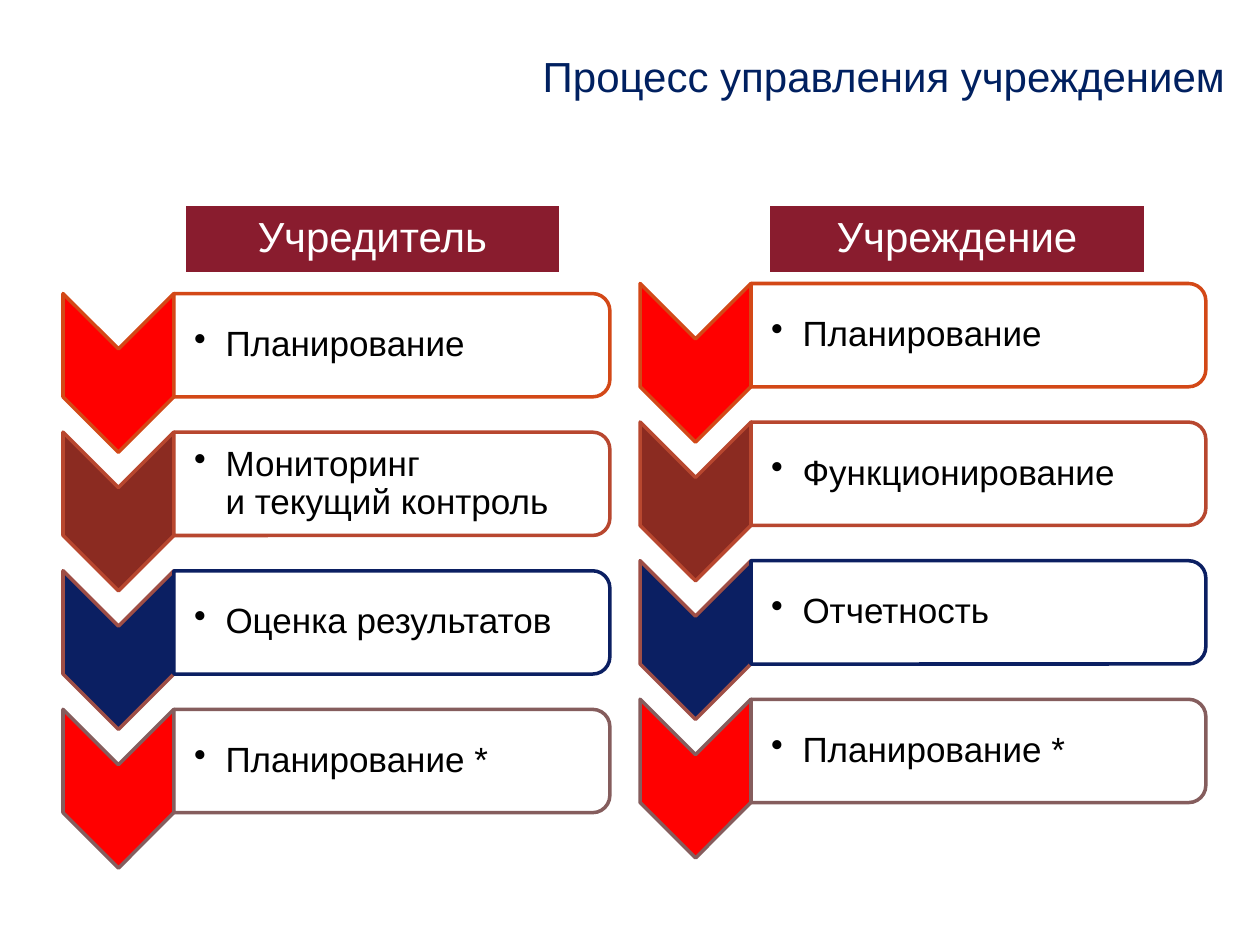
from lxml.etree import SubElement
from pptx import Presentation
from pptx.dml.color import RGBColor
from pptx.enum.shapes import MSO_SHAPE
from pptx.enum.text import MSO_ANCHOR, PP_ALIGN
from pptx.oxml.ns import qn
from pptx.util import Inches, Pt

COLORS = {
    "white": "FFFFFF", "black": "000000", "title": "002060", "head": "891C2E",
    "red": "FF0000", "brown": "8B2B21", "navy": "0B1F62",
    "orange": "D34817", "rust": "B8472F", "brick": "9E4E46", "mauve": "855D5D",
}
STEPS = [
    ("red", "orange", "orange"),
    ("brown", "rust", "rust"),
    ("navy", "brick", "navy"),
    ("red", "mauve", "mauve"),
]
FOUNDER = ["Планирование", "Мониторинг \vи текущий контроль",
           "Оценка результатов", "Планирование *"]
AGENCY = ["Планирование", "Функционирование", "Отчетность", "Планирование *"]
ARROW_W, ARROW_H, PANEL_H, PITCH = 0.88, 1.26, 0.82, 1.1


def color(name):
    return RGBColor.from_string(COLORS[name])


def add_shape(slide, kind, left, top, width, height, fill, line, turned=False):
    if turned:
        left, top = left + (width - height) / 2, top + (height - width) / 2
        width, height = height, width
    shape = slide.shapes.add_shape(
        kind, Inches(left), Inches(top), Inches(width), Inches(height))
    shape.rotation = 90 if turned else 0
    shape.shadow.inherit = False
    shape.fill.solid()
    shape.fill.fore_color.rgb = color(fill)
    shape.line.color.rgb = color(line)
    shape.line.width = Pt(2)
    return shape


def add_box(slide, left, top, width, height):
    return slide.shapes.add_textbox(
        Inches(left), Inches(top), Inches(width), Inches(height))


def set_text(shape, text, size, ink, align):
    frame = shape.text_frame
    frame.word_wrap = True
    frame.vertical_anchor = MSO_ANCHOR.MIDDLE
    para = frame.paragraphs[0]
    para.text = text
    para.alignment = align
    para.font.name = "Arial"
    para.font.size = Pt(size)
    para.font.color.rgb = color(ink)
    return frame, para


def add_title(slide, left, top, width, height):
    box = add_box(slide, left, top, width, height)
    set_text(box, "Процесс управления учреждением", 24, "title", PP_ALIGN.RIGHT)


def add_head(slide, left, top, width, height, text):
    head = add_shape(slide, MSO_SHAPE.RECTANGLE, left, top, width, height,
                     "head", "white")
    para = set_text(head, text, 24, "white", PP_ALIGN.CENTER)[1]
    para.line_spacing = 0.9


def add_label(slide, left, top, width, height, text):
    box = add_box(slide, left, top, width, height)
    frame = box.text_frame
    frame.margin_left = Inches(0.16)
    frame.margin_top = frame.margin_right = frame.margin_bottom = Inches(0.01)
    props = frame.paragraphs[0]._p.get_or_add_pPr()
    props.set("marL", str(Inches(0.25)))
    props.set("indent", str(Inches(-0.25)))
    SubElement(props, qn("a:buChar")).set("char", "•")
    para = set_text(box, text, 20, "black", PP_ALIGN.LEFT)[1]
    para.line_spacing = 0.9


def add_steps(slide, left, top, width, labels):
    start, span = left + ARROW_W, width - ARROW_W
    for row, (label, (fill, edge, frame)) in enumerate(zip(labels, STEPS)):
        y = top + row * PITCH
        add_shape(slide, MSO_SHAPE.CHEVRON, left, y, ARROW_W, ARROW_H,
                  fill, edge, turned=True)
        panel = add_shape(slide, MSO_SHAPE.ROUND_2_SAME_RECTANGLE, start, y,
                          span, PANEL_H, "white", frame, turned=True)
        tint = panel.fill._xPr.find(qn("a:solidFill"))[0]
        SubElement(tint, qn("a:alpha")).set("val", "90000")
        add_label(slide, start, y + 0.04, span - 0.04, PANEL_H - 0.08, label)


def main():
    deck = Presentation()
    deck.slide_width, deck.slide_height = Inches(10), Inches(7.5)
    slide = deck.slides.add_slide(deck.slide_layouts[6])
    add_title(slide, 2.17, 0.13, 7.65, 0.94)
    add_steps(slide, 0.5, 2.33, 4.34, FOUNDER)
    add_head(slide, 1.46, 1.62, 2.99, 0.55, "Учредитель")
    add_head(slide, 6.1, 1.62, 2.99, 0.55, "Учреждение")
    add_steps(slide, 5.08, 2.25, 4.49, AGENCY)
    deck.save("out.pptx")


if __name__ == "__main__":
    main()
